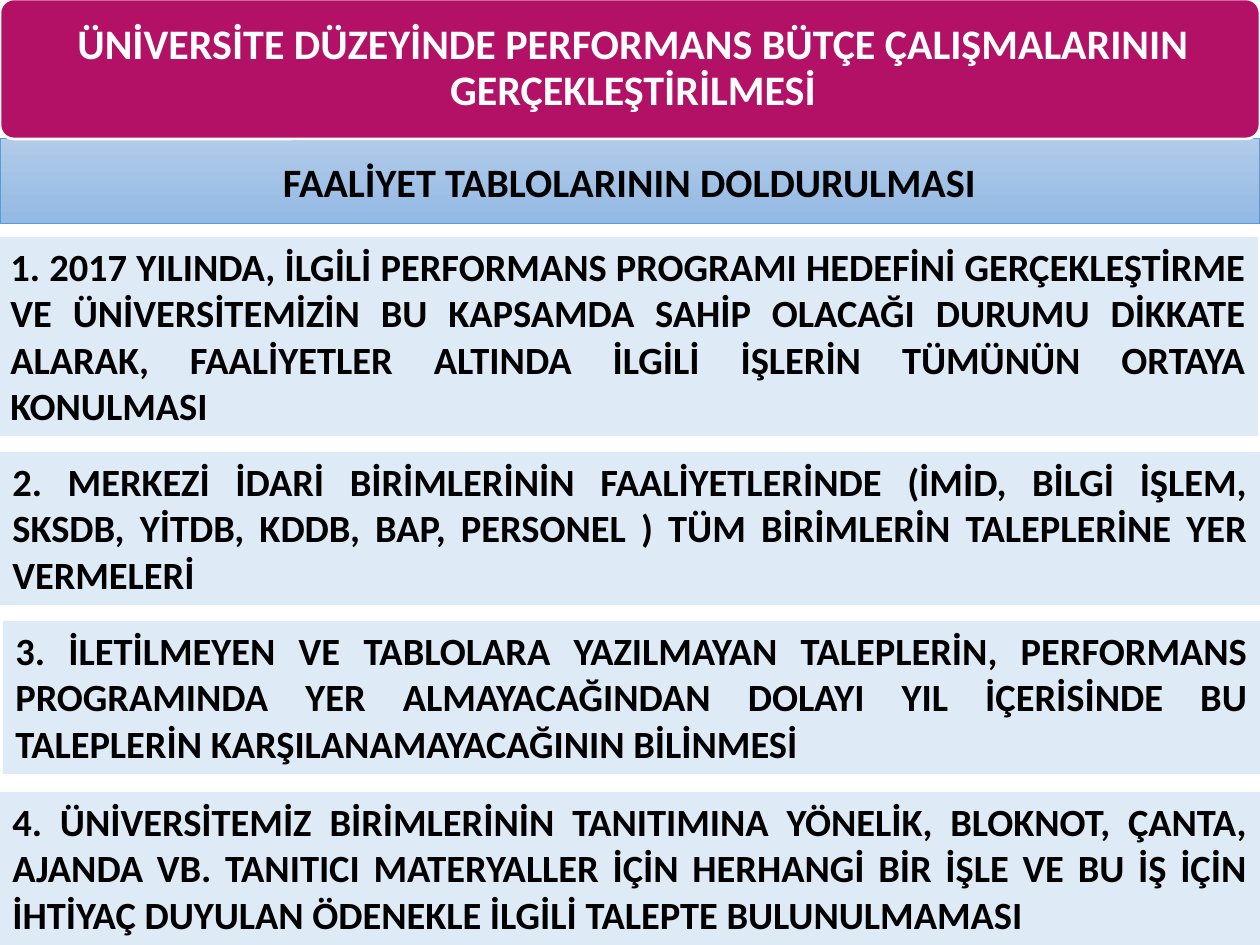
import pptx
import pptx.dml.color
import pptx.enum.shapes
import pptx.enum.text
import pptx.util

RGBColor = pptx.dml.color.RGBColor
SHAPE = pptx.enum.shapes.MSO_SHAPE
ALIGN = pptx.enum.text.PP_ALIGN
ANCHOR = pptx.enum.text.MSO_ANCHOR

MAGENTA = RGBColor(0xB3, 0x11, 0x66)
WHITE = RGBColor(0xFF, 0xFF, 0xFF)
BLACK = RGBColor(0x00, 0x00, 0x00)
BLUE_LINE = RGBColor(0x5B, 0x9B, 0xD5)
BLUE_TOP = RGBColor(0xB1, 0xCB, 0xE9)
BLUE_BOTTOM = RGBColor(0x93, 0xB9, 0xE4)
PALE_BLUE = RGBColor(0xDE, 0xEB, 0xF7)

FONT = "Calibri"
EMU_PER_PX = 914400 / 126

TITLE = "ÜNİVERSİTE DÜZEYİNDE PERFORMANS BÜTÇE ÇALIŞMALARININ GERÇEKLEŞTİRİLMESİ"
SUBTITLE = "FAALİYET TABLOLARININ DOLDURULMASI"
ITEMS = [
    ((-2, 237, 1260, 199),
     "1. 2017 YILINDA, İLGİLİ PERFORMANS PROGRAMI HEDEFİNİ GERÇEKLEŞTİRME VE "
     "ÜNİVERSİTEMİZİN BU KAPSAMDA SAHİP OLACAĞI DURUMU DİKKATE ALARAK, "
     "FAALİYETLER ALTINDA İLGİLİ İŞLERİN TÜMÜNÜN ORTAYA KONULMASI"),
    ((0, 452, 1260, 153),
     "2. MERKEZİ İDARİ BİRİMLERİNİN FAALİYETLERİNDE (İMİD, BİLGİ İŞLEM, SKSDB, "
     "YİTDB, KDDB, BAP, PERSONEL ) TÜM BİRİMLERİN TALEPLERİNE YER VERMELERİ"),
    ((3, 621, 1257, 153),
     "3. İLETİLMEYEN VE TABLOLARA YAZILMAYAN TALEPLERİN, PERFORMANS "
     "PROGRAMINDA YER ALMAYACAĞINDAN DOLAYI YIL İÇERİSİNDE BU TALEPLERİN "
     "KARŞILANAMAYACAĞININ BİLİNMESİ"),
    ((0, 792, 1260, 153),
     "4. ÜNİVERSİTEMİZ BİRİMLERİNİN TANITIMINA YÖNELİK, BLOKNOT, ÇANTA, AJANDA "
     "VB. TANITICI MATERYALLER İÇİN HERHANGİ BİR İŞLE VE BU İŞ İÇİN İHTİYAÇ "
     "DUYULAN ÖDENEKLE İLGİLİ TALEPTE BULUNULMAMASI"),
]


def px(length):
    """Turn a length in px into EMU."""
    return pptx.util.Emu(round(length * EMU_PER_PX))


def add_panel(page, kind, box):
    """Add a preset shape without shadow in the given box."""
    panel = page.shapes.add_shape(kind, *map(px, box))
    panel.shadow.inherit = False
    return panel


def write(shape, text, size, color, align, anchor):
    """Write one bold paragraph into the shape and return it."""
    frame = shape.text_frame
    frame.text = text
    frame.word_wrap = True
    frame.vertical_anchor = anchor
    para = frame.paragraphs[0]
    para.alignment = align
    font = para.runs[0].font
    font.name = FONT
    font.size = pptx.util.Pt(size)
    font.bold = True
    font.color.rgb = color
    return para


def add_title(page, box, text):
    """Add the rounded title banner with its text box."""
    left, top, width, height = box
    banner = add_panel(page, SHAPE.ROUNDED_RECTANGLE, box)
    banner.adjustments[0] = 0.1
    banner.fill.solid()
    banner.fill.fore_color.rgb = MAGENTA
    banner.line.color.rgb = WHITE
    banner.line.width = pptx.util.Pt(1.5)
    label_box = (left + 6, top + 4, width - 6, height - 8)
    label = page.shapes.add_textbox(*map(px, label_box))
    para = write(label, text, 24, WHITE, ALIGN.CENTER, ANCHOR.MIDDLE)
    para.line_spacing = 0.9


def add_subtitle(page, box, text):
    """Add the gradient band under the title."""
    band = add_panel(page, SHAPE.RECTANGLE, box)
    band.fill.gradient()
    band.fill.gradient_angle = 270
    for stop, color in zip(band.fill.gradient_stops, (BLUE_TOP, BLUE_BOTTOM)):
        stop.color.rgb = color
    band.line.color.rgb = BLUE_LINE
    band.line.width = pptx.util.Pt(0.5)
    write(band, text, 23, BLACK, ALIGN.CENTER, ANCHOR.MIDDLE)


def add_item(page, box, text):
    """Add one justified item on a pale panel."""
    panel = add_panel(page, SHAPE.RECTANGLE, box)
    panel.fill.solid()
    panel.fill.fore_color.rgb = PALE_BLUE
    panel.line.fill.background()
    write(panel, text, 22, BLACK, ALIGN.JUSTIFY, ANCHOR.TOP)


def main():
    """Build the deck and save it."""
    deck = pptx.Presentation()
    deck.slide_width, deck.slide_height = px(1260), px(945)
    page = deck.slides.add_slide(deck.slide_layouts[6])
    add_subtitle(page, (0, 138, 1260, 86), SUBTITLE)
    for box, text in ITEMS:
        add_item(page, box, text)
    add_title(page, (0, -1, 1260, 140), TITLE)
    deck.save("out.pptx")


if __name__ == "__main__":
    main()
